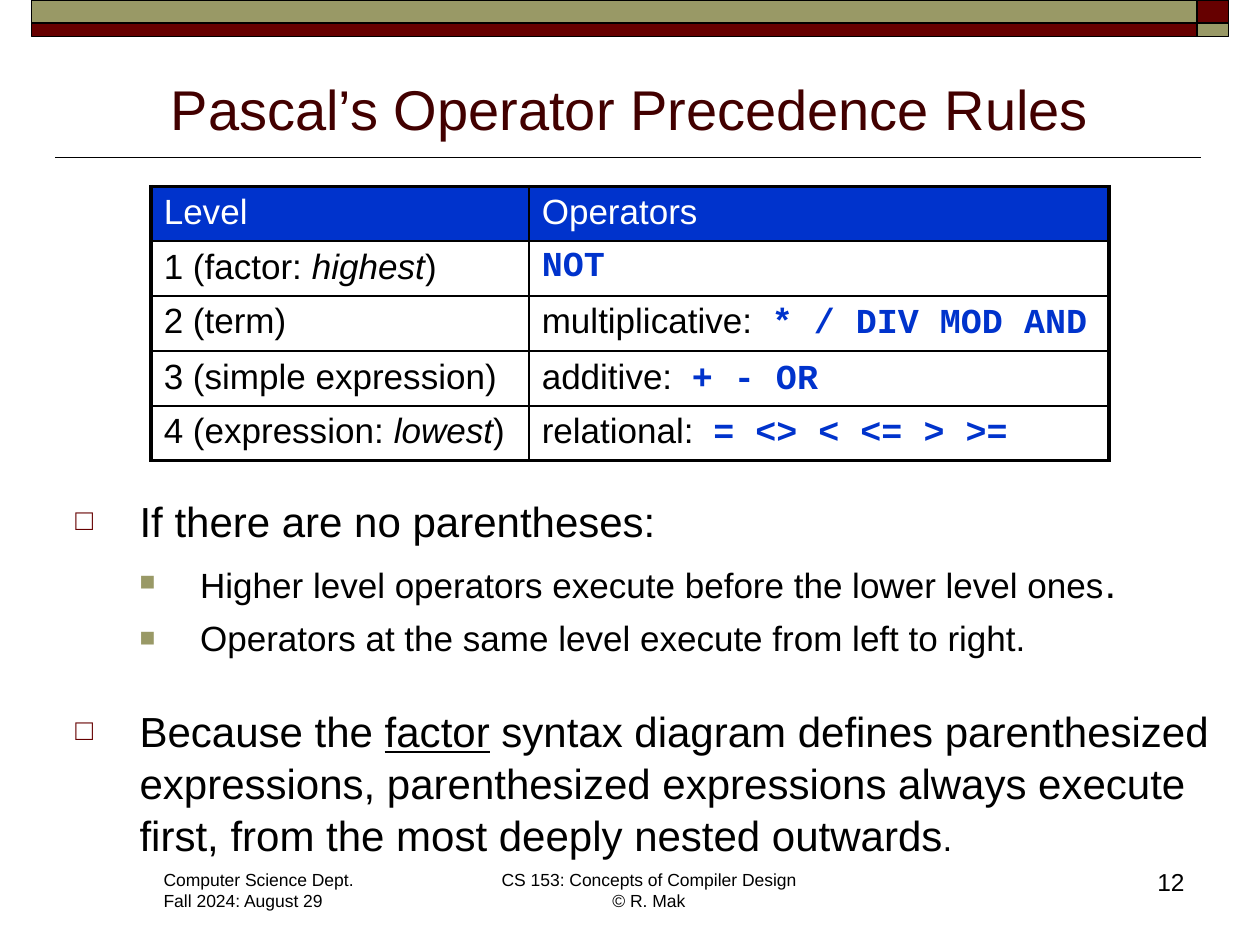
from lxml.etree import SubElement
from pptx import Presentation
from pptx.dml.color import RGBColor
from pptx.enum.shapes import MSO_CONNECTOR, MSO_SHAPE
from pptx.enum.text import MSO_ANCHOR, PP_ALIGN
from pptx.oxml.ns import qn
from pptx.util import Inches, Pt

BLACK = RGBColor(0x00, 0x00, 0x00)
WHITE = RGBColor(0xFF, 0xFF, 0xFF)
MAROON = RGBColor(0x66, 0x00, 0x00)
DARK_MAROON = RGBColor(0x42, 0x00, 0x00)
OLIVE = RGBColor(0x99, 0x99, 0x66)
BLUE = RGBColor(0x00, 0x33, 0xCC)

PRECEDENCE = [
    [[("Level", {})], [("Operators", {})]],
    [[("1 (factor: ", {}), ("highest", {"italic": True}), (")", {})], "NOT"],
    [[("2 (term)", {})], "multiplicative:  |* / DIV MOD AND"],
    [[("3 (simple expression)", {})], "additive:  |+ - OR"],
    [[("4 (expression: ", {}), ("lowest", {"italic": True}), (")", {})],
     "relational:  |= <> < <= > >="],
]


def add_text(p, text, size=20, color=BLACK, font="Arial", bold=False,
             italic=False, underline=False):
    r = p.add_run()
    r.text = text
    r.font.name = font
    r.font.size = Pt(size)
    r.font.color.rgb = color
    r.font.bold = bold
    r.font.italic = italic
    r.font.underline = underline


def add_box(s, x, y, w, h, anchor=MSO_ANCHOR.TOP, wrap=True):
    tf = s.shapes.add_textbox(Inches(x), Inches(y), Inches(w), Inches(h)).text_frame
    tf.word_wrap = wrap
    tf.vertical_anchor = anchor
    return tf


def add_rule(s, x1, x2, y):
    line = s.shapes.add_connector(MSO_CONNECTOR.STRAIGHT, Inches(x1), Inches(y),
                                  Inches(x2), Inches(y))
    line.line.color.rgb = BLACK
    line.line.width = Pt(1)
    SubElement(line._element.spPr, qn("a:effectLst"))


def add_banner(s, x, y, w, h):
    corner, top = 0.25, 0.18
    bars = [(x, y, w - corner, top, OLIVE),
            (x + w - corner, y, corner, top, MAROON),
            (x, y + top, w - corner, h - top, MAROON),
            (x + w - corner, y + top, corner, h - top, OLIVE)]
    for left, upper, width, height, color in bars:
        sp = s.shapes.add_shape(MSO_SHAPE.RECTANGLE, Inches(left), Inches(upper),
                                Inches(width), Inches(height))
        sp.shadow.inherit = False
        sp.fill.solid()
        sp.fill.fore_color.rgb = color
        sp.line.color.rgb = BLACK
        sp.line.width = Pt(1)


def add_title(s, x, y, w, h):
    p = add_box(s, x, y, w, h, MSO_ANCHOR.BOTTOM).paragraphs[0]
    p.alignment = PP_ALIGN.CENTER
    add_text(p, "Pascal’s Operator Precedence Rules", size=32, color=DARK_MAROON)


def set_borders(cell, outer):
    tc_pr = cell._tc.get_or_add_tcPr()
    for side in "LRTB":
        width = Pt(2.25) if side in outer else Pt(1)
        ln = SubElement(tc_pr, qn(f"a:ln{side}"), w=str(int(width)))
        fill = SubElement(ln, qn("a:solidFill"))
        SubElement(fill, qn("a:srgbClr"), val=str(BLACK))


def add_precedence_table(s, x, y, w, h):
    heights = [0.41, 0.42, 0.44, 0.43, 0.43]
    last = len(PRECEDENCE) - 1
    table = s.shapes.add_table(len(PRECEDENCE), 2, Inches(x), Inches(y),
                               Inches(w), Inches(h)).table
    table.first_row = False
    table.horz_banding = False
    table.columns[0].width = Inches(3)
    table.columns[1].width = Inches(w - 3)
    for i, row in enumerate(PRECEDENCE):
        table.rows[i].height = Inches(heights[i])
        for j, content in enumerate(row):
            cell = table.cell(i, j)
            set_borders(cell, "LR"[j] + ("T" if i == 0 else "B" if i == last else ""))
            if i == 0:
                cell.fill.solid()
                cell.fill.fore_color.rgb = BLUE
            else:
                cell.fill.background()
            p = cell.text_frame.paragraphs[0]
            if isinstance(content, str):
                kind, _, operators = content.rpartition("|")
                if kind:
                    add_text(p, kind)
                add_text(p, operators, color=BLUE, font="Courier New", bold=True)
            else:
                for text, style in content:
                    add_text(p, text, color=BLACK if i else WHITE, **style)


def set_bullet(p, level):
    char, color, percent, margin, hang = [("□", MAROON, 70, 0.51, 0.51),
                                          ("■", OLIVE, 75, 0.99, 0.48)][level]
    p.level = level
    p_pr = p._p.get_or_add_pPr()
    p_pr.set("marL", str(int(Inches(margin))))
    p_pr.set("indent", str(int(Inches(-hang))))
    SubElement(SubElement(p_pr, qn("a:buClr")), qn("a:srgbClr"), val=str(color))
    SubElement(p_pr, qn("a:buSzPct"), val=str(percent * 1000))
    SubElement(p_pr, qn("a:buFont"), typeface="Arial")
    SubElement(p_pr, qn("a:buChar"), char=char)


def add_bullets(s, x, y, w, h):
    items = [
        (0, 0, [("If there are no parentheses:", {"size": 24})]),
        (1, 5.5, [("Higher level operators execute before the lower level ones", {}),
                  (".", {"size": 24})]),
        (1, 4.5, [("Operators at the same level execute from left to right.", {})]),
        (0, 26, [("Because the ", {"size": 24}),
                 ("factor", {"size": 24, "underline": True}),
                 (" syntax diagram defines parenthesized expressions, parenthesized "
                  "expressions always execute first, from the most deeply nested "
                  "outwards", {"size": 24}),
                 (".", {})]),
    ]
    tf = add_box(s, x, y, w, h)
    for i, (level, before, runs) in enumerate(items):
        p = tf.add_paragraph() if i else tf.paragraphs[0]
        set_bullet(p, level)
        p.line_spacing = 1.03
        p.space_before = Pt(before)
        for text, style in runs:
            add_text(p, text, **style)


def add_footer(s, x, y, w, h):
    tf = add_box(s, x, y, 1.72, h, wrap=False)
    add_text(tf.paragraphs[0], "Computer Science Dept.", size=10)
    add_text(tf.add_paragraph(), "Fall 2024: August 29", size=10)

    p = add_box(s, x + 2.67, y, 2.56, h, wrap=False).paragraphs[0]
    p.alignment = PP_ALIGN.CENTER
    add_text(p, "CS 153: Concepts of Compiler Design", size=10)
    p.add_line_break()
    add_text(p, "© R. Mak", size=10)

    p = add_box(s, x + w - 2.08, y - 0.02, 2.08, 0.5).paragraphs[0]
    p.alignment = PP_ALIGN.RIGHT
    add_text(p, "12", size=14)


def main():
    prs = Presentation()
    prs.slide_width, prs.slide_height = Inches(10), Inches(7.5)
    s = prs.slides.add_slide(prs.slide_layouts[6])
    add_rule(s, 0.44, 9.53, 1.25)
    add_banner(s, 0.25, 0, 9.5, 0.29)
    add_footer(s, 1.2, 6.85, 8.3, 0.44)
    add_title(s, 0.5, 0.45, 9, 0.72)
    add_precedence_table(s, 1.2, 1.48, 7.6, 2.13)
    add_bullets(s, 0.5, 3.87, 9.3, 3)
    prs.save("out.pptx")


if __name__ == "__main__":
    main()
